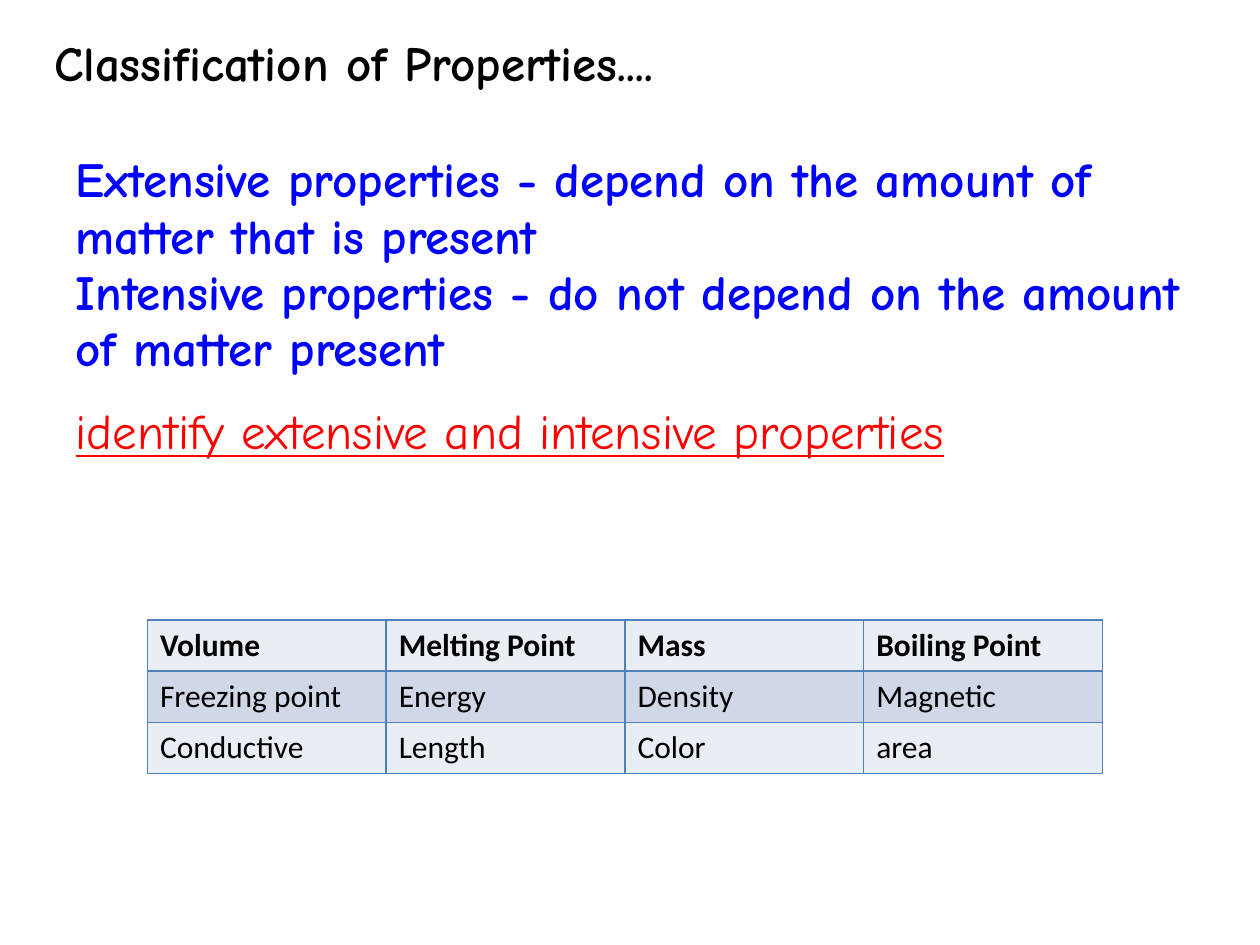
"""Build a slide on extensive and intensive properties with a sorting table."""
import pptx
import pptx.dml.color
import pptx.enum.text
import pptx.oxml.ns
import pptx.util
from lxml import etree

Inches = pptx.util.Inches
qn = pptx.oxml.ns.qn


def style(par, face, size, color, bold=False, line=False):
    """Set the font of a paragraph."""
    font = par.font
    font.name, font.size = face, pptx.util.Pt(size)
    font.bold, font.underline = bold, line
    font.color.rgb = pptx.dml.color.RGBColor.from_string(color)


def grid(rows, cols, left, top, width, height):
    """Add the frame of a plain table without header or banding."""
    frame = slide.shapes.add_table(
        rows, cols, Inches(left), Inches(top), Inches(width), Inches(height))
    frame.table.first_row = frame.table.horz_banding = False
    return frame


deck = pptx.Presentation()
deck.slide_width, deck.slide_height = Inches(10), Inches(7.5)
slide = deck.slides.add_slide(deck.slide_layouts[6])

title = "Classification of Properties...."
terms = (
    "Extensive properties - depend on the amount of matter that is present\n"
    "Intensive properties - do not depend on the amount of matter present"
)
task = "identify extensive and intensive properties"
for text, left, top, height, color, bold in [
    (title, 0.33, 0.25, 0.57, "000000", True),
    (terms, 0.5, 1.17, 1.97, "0000FF", True),
    (task, 0.5, 3.17, 0.57, "FF0000", False),
]:
    frame = grid(1, 1, left, top, 9, height)
    frame.table.rows[0].height = Inches(0)
    frame.height = Inches(height)
    cell = frame.table.cell(0, 0)
    cell.text = text
    cell.vertical_anchor = pptx.enum.text.MSO_ANCHOR.MIDDLE
    cell.fill.background()
    for par in cell.text_frame.paragraphs:
        style(par, "Comic Neue", 28, color, bold, line=not bold)

words = [
    ["Volume", "Melting Point", "Mass", "Boiling Point"],
    ["Freezing point", "Energy", "Density", "Magnetic"],
    ["Conductive", "Length", "Color", "area"],
]
table = grid(3, 4, 1.17, 4.92, 7.58, 1.22).table
for row, names in enumerate(words):
    for col, name in enumerate(names):
        cell = table.cell(row, col)
        cell.text = name
        style(cell.text_frame.paragraphs[0], "Calibri", 18, "000000", bold=row == 0)
        props = cell._tc.get_or_add_tcPr()
        for side in "LRTB":
            edge = etree.SubElement(props, qn(f"a:ln{side}"), w=str(pptx.util.Pt(1)))
            fill = etree.SubElement(edge, qn("a:solidFill"))
            etree.SubElement(fill, qn("a:srgbClr"), val="4F81BD")
        cell.fill.solid()
        shade = "D0D8E8" if row % 2 else "E9EDF4"
        cell.fill.fore_color.rgb = pptx.dml.color.RGBColor.from_string(shade)

deck.save("out.pptx")
